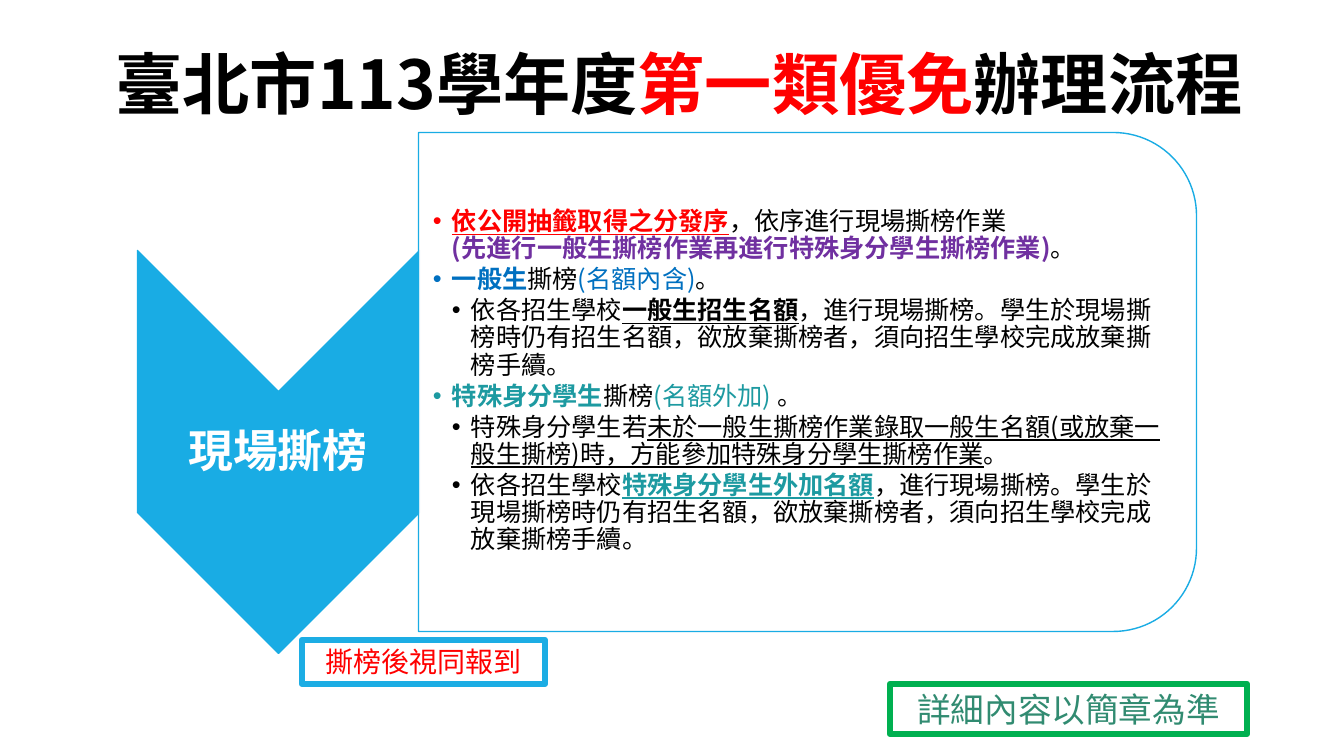
"""Build the slide on the on-site placement process."""
from lxml.etree import SubElement
from pptx import Presentation
from pptx.dml.color import RGBColor
from pptx.enum.shapes import MSO_SHAPE as Shape
from pptx.enum.text import MSO_ANCHOR as Anchor, MSO_AUTO_SIZE as AutoSize, PP_ALIGN as Align
from pptx.oxml.ns import qn
from pptx.util import Emu, Pt

FONT = "Noto Sans CJK TC"
BLACK, WHITE, RED = "000000", "FFFFFF", "FF0000"
BLUE, TEAL, PURPLE, SKY = "0070C0", "1D9AA1", "7030A0", "19ACE4"
BREAK = ("\n", BLACK, "")
INDENT = 19
PLACING = "，進行現場撕榜。學生於現場撕榜時仍有招生名額，欲放棄撕榜者，須向招生學校完成放棄撕榜手續。"

STEPS = [
    (1, [("依公開抽籤取得之分發序", RED, "bu"), ("，依序進行現場撕榜作業", BLACK, ""), BREAK,
         ("(先進行一般生撕榜作業再進行特殊身分學生撕榜作業)", PURPLE, "b"), ("。", BLACK, "")]),
    (1, [("一般生", BLUE, "b"), ("撕榜", BLACK, ""), ("(名額內含)", BLUE, ""), ("。", BLACK, "")]),
    (2, [("依各招生學校", BLACK, ""), ("一般生招生名額", BLACK, "bu"), (PLACING, BLACK, "")]),
    (1, [("特殊身分學生", TEAL, "b"), ("撕榜", BLACK, ""), ("(名額外加) ", TEAL, ""),
         ("。", BLACK, "")]),
    (2, [("特殊身分學生若", BLACK, ""),
         ("未於一般生撕榜作業錄取一般生名額(或放棄一般生撕榜)時，方能參加特殊身分學生撕榜作業",
          BLACK, "u"), ("。", BLACK, "")]),
    (2, [("依各招生學校", BLACK, ""), ("特殊身分學生外加名額", TEAL, "bu"), (PLACING, BLACK, "")]),
]


def px(length):
    """Turn pixels into EMU."""
    return Emu(round(length * 914400 / 100.8))


def color(value):
    """Turn a hex string into a colour."""
    return RGBColor.from_string(value)


def add_spans(para, spans, size):
    """Add styled runs; the style letters are b for bold and u for underline."""
    for text, shade, style in spans:
        if text == "\n":
            para.add_line_break()
            continue
        span = para.add_run()
        span.text = text
        font = span.font
        font.name, font.size = FONT, Pt(size)
        font.color.rgb = color(shade)
        font.bold, font.underline = "b" in style, "u" in style
        SubElement(font._element, qn("a:ea"), typeface=FONT)


def add_bullet(para, level, shade):
    """Give a paragraph a coloured bullet and a hanging indent."""
    props = para._p.get_or_add_pPr()
    props.set("marL", str(px(INDENT * level)))
    props.set("indent", str(px(-INDENT)))
    SubElement(SubElement(props, qn("a:buClr")), qn("a:srgbClr"), val=shade)
    SubElement(props, qn("a:buFont"), typeface="Arial")
    SubElement(props, qn("a:buChar"), char="•")


def add_box(page, place, margins):
    """Add a wrapping, vertically centred text box and return its frame."""
    frame = page.shapes.add_textbox(*map(px, place)).text_frame
    frame.word_wrap, frame.vertical_anchor = True, Anchor.MIDDLE
    (frame.margin_left, frame.margin_top,
     frame.margin_right, frame.margin_bottom) = map(px, margins)
    return frame


def add_heading(page, place, margins, spans, size):
    """Add one centred line of text."""
    para = add_box(page, place, margins).paragraphs[0]
    para.alignment, para.line_spacing = Align.CENTER, 0.9
    add_spans(para, spans, size)


def add_figure(page, kind, place, fill, line, width, turn=0):
    """Add a flat filled shape with an outline."""
    figure = page.shapes.add_shape(kind, *map(px, place))
    figure.shadow.inherit = False
    figure.rotation = turn
    figure.fill.solid()
    figure.fill.fore_color.rgb = color(fill)
    figure.line.color.rgb = color(line)
    figure.line.width = Pt(width)
    return figure


def add_note(page, place, line, text, shade, size):
    """Add a thickly framed note."""
    frame = add_figure(page, Shape.RECTANGLE, place, WHITE, line, 4.5).text_frame
    frame.word_wrap, frame.vertical_anchor = True, Anchor.TOP
    frame.auto_size = AutoSize.SHAPE_TO_FIT_TEXT
    para = frame.paragraphs[0]
    para.alignment = Align.CENTER
    add_spans(para, [(text, shade, "")], size)


def add_steps(page, place):
    """Add the bulleted steps."""
    frame = add_box(page, place, (14, 1, 1, 1))
    for index, (level, spans) in enumerate(STEPS):
        para = frame.add_paragraph() if index else frame.paragraphs[0]
        para.level = level
        add_bullet(para, level, spans[0][1])
        para.line_spacing = 0.9
        para.space_before = Pt(2.7 if index else 0)
        add_spans(para, spans, 18)


def main():
    """Build and save the deck."""
    deck = Presentation()
    deck.slide_width, deck.slide_height = px(1344), px(756)
    page = deck.slides.add_slide(deck.slide_layouts[6])

    add_heading(page, (85, 19, 1188, 137), (10, 5, 10, 5),
                [("臺北市113學年度", BLACK, "b"), ("第一類優免", RED, "b"),
                 ("辦理流程", BLACK, "b")], 48)

    add_figure(page, Shape.CHEVRON, (77, 311, 403, 282), SKY, SKY, 1, 90)
    add_heading(page, (137, 392, 282, 121), (2, 2, 2, 2), [("現場撕榜", WHITE, "b")], 32)

    panel = add_figure(page, Shape.ROUND_2_SAME_RECTANGLE, (558, -7, 499, 778),
                       WHITE, SKY, 1, 90)
    panel.adjustments[0], panel.adjustments[1] = 0.167, 0
    shade = panel.fill._xPr.find(qn("a:solidFill"))[0]
    SubElement(shade, qn("a:alpha"), val="90000")
    add_steps(page, (419, 156, 753, 451))

    add_note(page, (302, 640, 243, 44), "1CADE4", "撕榜後視同報到", RED, 20)
    add_note(page, (890, 684, 357, 50), "00B050", "詳細內容以簡章為準", "318B71", 24)
    deck.save("out.pptx")


if __name__ == "__main__":
    main()
